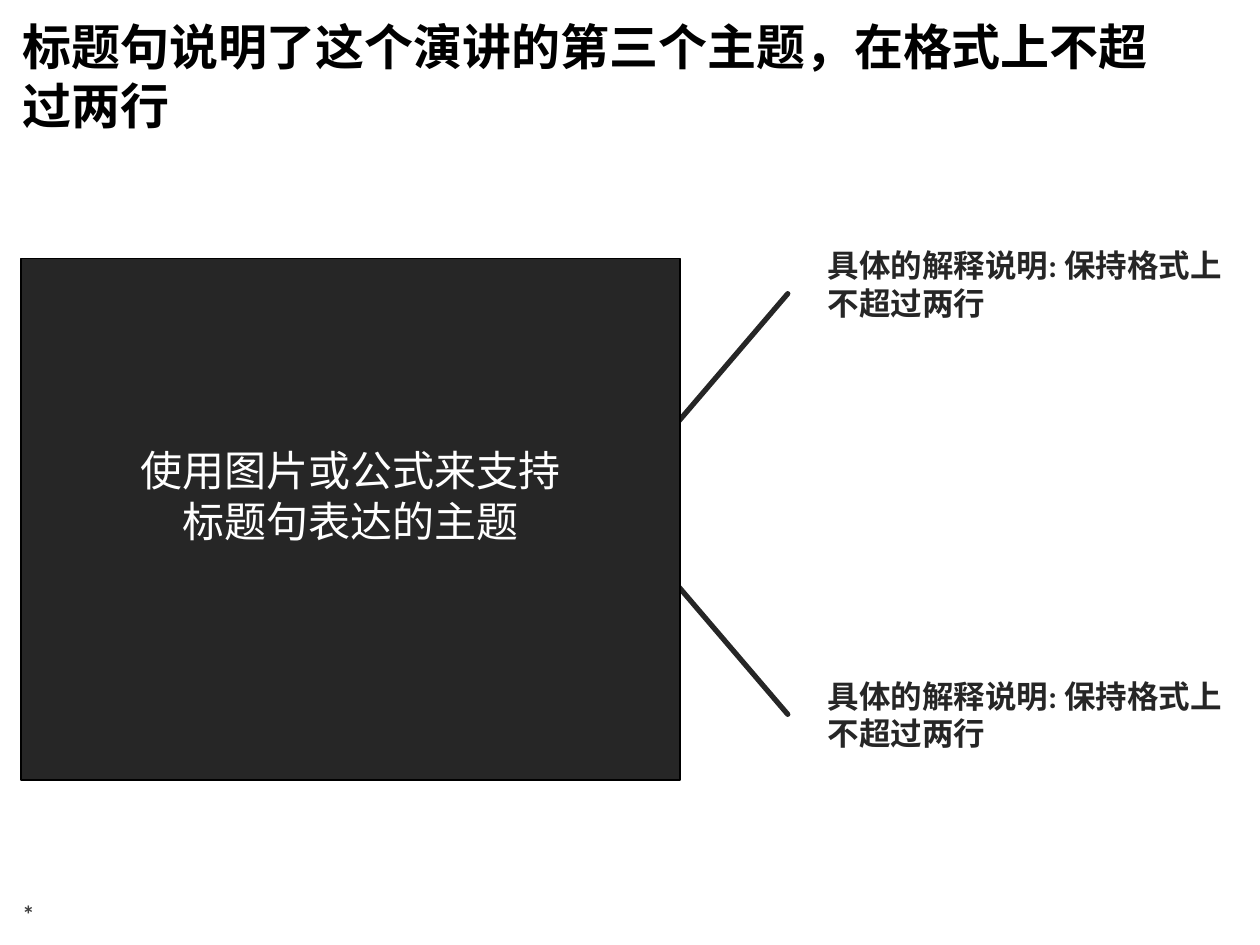
import pptx
import pptx.dml.color
import pptx.enum.shapes
import pptx.enum.text
import pptx.oxml.ns
import pptx.util

Cm = pptx.util.Cm
Anchor = pptx.enum.text.MSO_ANCHOR
Align = pptx.enum.text.PP_ALIGN


def color(hexa):
    return pptx.dml.color.RGBColor.from_string(hexa)


class Deck:
    """Holds the style and the current slide."""

    font = "Calibri"
    dark, black, white, grey = "262626", "000000", "FFFFFF", "404040"

    def __init__(self):
        self.prs = pptx.Presentation()
        self.prs.slide_width, self.prs.slide_height = Cm(25.4), Cm(19.05)
        self.slide = self.prs.slides.add_slide(self.prs.slide_layouts[5])

    def label(self, shape, lines, size, tint, bold=True, align=Align.LEFT,
              anchor=Anchor.TOP, pad=(0.25, 0.13, 0.25, 0.13)):
        frame = shape.text_frame
        frame.text = "\n".join(lines)
        frame.word_wrap = True
        frame.auto_size = pptx.enum.text.MSO_AUTO_SIZE.NONE
        frame.vertical_anchor = anchor
        (frame.margin_left, frame.margin_top,
         frame.margin_right, frame.margin_bottom) = map(Cm, pad)
        for para in frame.paragraphs:
            para.alignment = align
            para.font.name = self.font
            para.font.size = pptx.util.Pt(size)
            para.font.bold = bold
            para.font.color.rgb = color(tint)

    def title(self, box, text):
        shape = self.slide.shapes.title
        shape.left, shape.top, shape.width, shape.height = map(Cm, box)
        self.label(shape, [text], 28, self.black)

    def text(self, box, text, size, tint, **style):
        shape = self.slide.shapes.add_textbox(*map(Cm, box))
        self.label(shape, [text], size, tint, **style)

    def panel(self, box, lines, **style):
        shape = self.slide.shapes.add_shape(
            pptx.enum.shapes.MSO_SHAPE.RECTANGLE, *map(Cm, box))
        shape.shadow.inherit = False
        shape.fill.solid()
        shape.fill.fore_color.rgb = color(self.dark)
        shape.line.color.rgb = color(self.black)
        shape.line.width = pptx.util.Pt(1)
        self.label(shape, lines, 24, self.white, bold=False,
                   align=Align.CENTER, anchor=Anchor.MIDDLE, **style)

    def line(self, *ends):
        link = self.slide.shapes.add_connector(
            pptx.enum.shapes.MSO_CONNECTOR.STRAIGHT, *map(Cm, ends))
        link.line.color.rgb = color(self.dark)
        link.line.width = pptx.util.Pt(3)
        link.get_or_add_ln().set("cap", "rnd")
        # Turn off the theme shadow
        props = link.element.spPr
        props.append(props.makeelement(pptx.oxml.ns.qn("a:effectLst"), {}))


def main():
    deck = Deck()

    # Title
    deck.title((0.2, 0.2, 24.1, 2.62), "标题句说明了这个演讲的第三个主题，在格式上不超过两行")

    # Callout lines, starting behind the panel
    for start, end in ((11.43, 14.4), (8.89, 5.92)):
        deck.line(13.34, start, 15.88, end)

    # Main panel, text a little above the middle
    deck.panel((0.43, 5.21, 13.28, 10.52),
               ["使用图片或公式来支持", "标题句表达的主题"],
               pad=(0.25, 0.13, 0.25, 1.1))

    # Explanations
    for top in (4.88, 13.56):
        deck.text((16.51, top, 8.46, 1.83), "具体的解释说明: 保持格式上不超过两行",
                  18, deck.dark, pad=(0.18, 0.08, 0.18, 0.08))

    # Footnote
    deck.text((0.2, 17.83, 5.92, 1.02), "*", 14, deck.grey, anchor=Anchor.BOTTOM)

    deck.prs.save("out.pptx")


if __name__ == "__main__":
    main()
